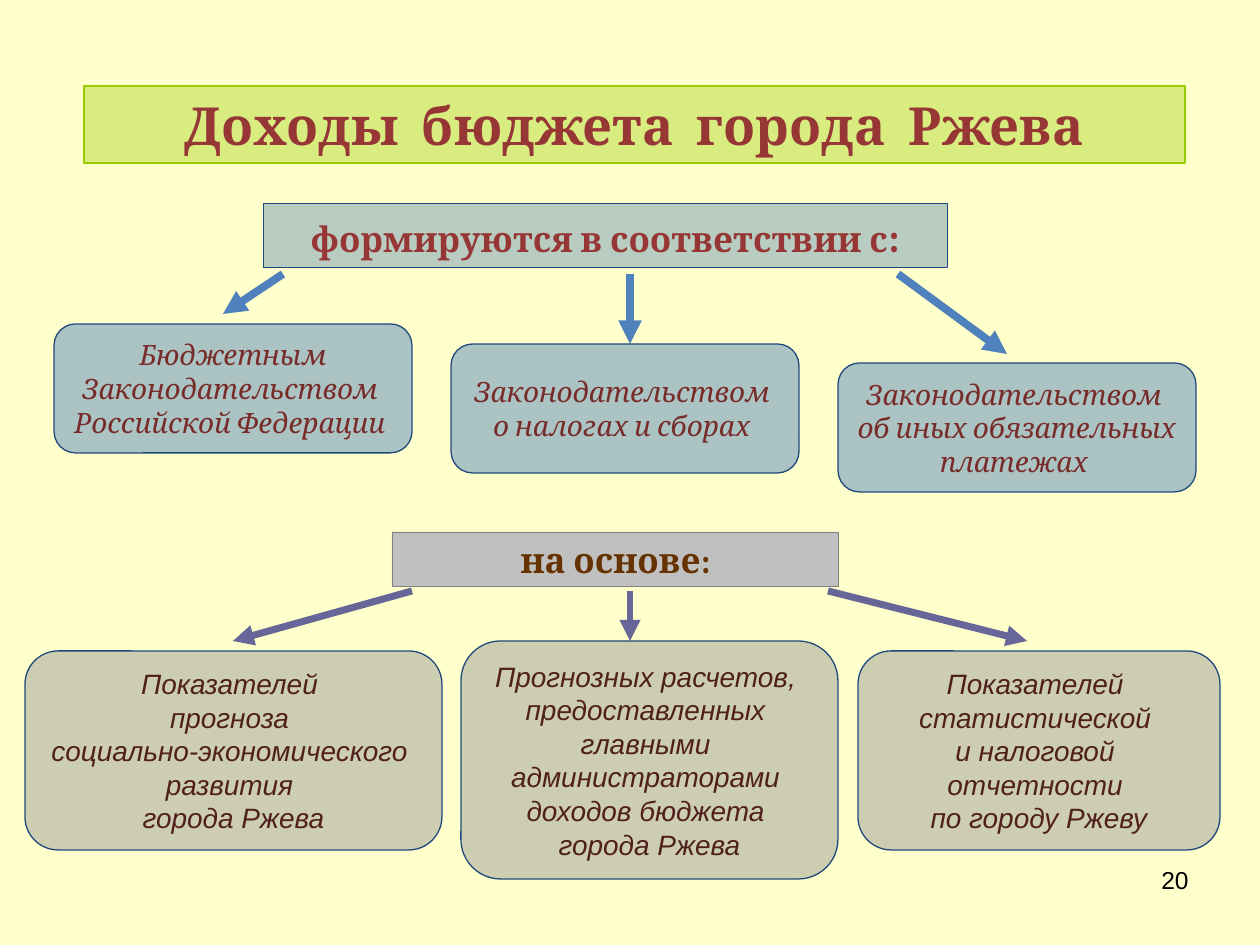
from lxml.etree import SubElement
from pptx import Presentation
from pptx.dml.color import RGBColor
from pptx.enum.shapes import MSO_CONNECTOR, MSO_SHAPE
from pptx.enum.text import MSO_ANCHOR, MSO_AUTO_SIZE, PP_ALIGN
from pptx.oxml.ns import qn
from pptx.util import Inches, Pt

SCALE = 914400 / 126
CREAM = RGBColor(0xFF, 0xFF, 0xCC)
LIME = RGBColor(0x99, 0xCC, 0x00)
RED = RGBColor(0x97, 0x37, 0x35)
WINE = RGBColor(0x78, 0x2C, 0x2A)
BROWN = RGBColor(0x66, 0x33, 0x00)
DARK = RGBColor(0x50, 0x21, 0x1C)
STEEL = RGBColor(0x43, 0x76, 0xB3)
BLUE = RGBColor(0x4F, 0x81, 0xBD)
NAVY = RGBColor(0x1F, 0x49, 0x7D)
PLUM = RGBColor(0x66, 0x66, 0x99)
SILVER = RGBColor(0xC0, 0xC0, 0xC0)
GREY = RGBColor(0x96, 0x96, 0x96)
EDGE = RGBColor(0x80, 0x80, 0x80)
BLACK = RGBColor(0, 0, 0)


def emu(*sizes):
    return [round(size * SCALE) for size in sizes]


class Page:
    serif = "Cambria"
    sans = "Arial"

    def __init__(self, slide):
        self.slide = slide
        back = slide.background.fill
        back.solid()
        back.fore_color.rgb = CREAM

    def paint(self, shape, fill, line, width, alpha=100):
        shape.fill.solid()
        shape.fill.fore_color.rgb = fill
        if alpha < 100:
            color = shape._element.spPr.find(qn("a:solidFill"))[0]
            SubElement(color, qn("a:alpha")).set("val", str(alpha * 1000))
        shape.line.color.rgb = line
        shape.line.width = Pt(width)

    def label(self, shape, lines, font, color, bold=False, italic=False,
              align=PP_ALIGN.CENTER, anchor=MSO_ANCHOR.MIDDLE, wrap=True):
        frame = shape.text_frame
        frame.auto_size = MSO_AUTO_SIZE.NONE
        frame.word_wrap = wrap
        frame.vertical_anchor = anchor
        frame.margin_left = frame.margin_right = Inches(0.1)
        frame.margin_top = frame.margin_bottom = Inches(0.05)
        for i, runs in enumerate(lines):
            para = frame.add_paragraph() if i else frame.paragraphs[0]
            para.alignment = align
            for text, size in runs:
                run = para.add_run()
                run.text = text
                run.font.name = font
                run.font.size = Pt(size)
                run.font.bold = bold
                run.font.italic = italic
                run.font.color.rgb = color

    def title(self, box, text):
        shape = self.slide.shapes.title
        shape.left, shape.top, shape.width, shape.height = emu(*box)
        self.paint(shape, LIME, LIME, 0.75, 37)
        self.label(shape, [[(text, 30)]], self.serif, RED, bold=True)

    def shape(self, kind, box):
        shape = self.slide.shapes.add_shape(kind, *emu(*box))
        shape.shadow.inherit = False
        return shape

    def banner(self, box, runs, color, fill, line, alpha=100):
        shape = self.shape(MSO_SHAPE.RECTANGLE, box)
        self.paint(shape, fill, line, 0.5, alpha)
        self.label(shape, [runs], self.serif, color, bold=True, anchor=MSO_ANCHOR.TOP)

    def card(self, box, lines, font, color, fill):
        shape = self.shape(MSO_SHAPE.ROUNDED_RECTANGLE, box)
        self.paint(shape, fill, NAVY, 0.75, 47)
        self.label(shape, [[(line, 16)] for line in lines], font, color,
                   italic=True, wrap=False)

    def arrow(self, ends, color, width):
        link = self.slide.shapes.add_connector(MSO_CONNECTOR.STRAIGHT, *emu(*ends))
        link.line.color.rgb = color
        link.line.width = Pt(width)
        props = link._element.spPr
        SubElement(props.find(qn("a:ln")), qn("a:tailEnd")).set("type", "triangle")
        SubElement(props, qn("a:effectLst"))

    def number(self, box, text):
        shape = self.slide.shapes.add_textbox(*emu(*box))
        self.label(shape, [[(text, 14)]], self.sans, BLACK,
                   align=PP_ALIGN.RIGHT, anchor=MSO_ANCHOR.TOP)


def main():
    deck = Presentation()
    deck.slide_width, deck.slide_height = Inches(10), Inches(7.5)
    page = Page(deck.slides.add_slide(deck.slide_layouts[5]))

    page.title((84, 86, 1101, 77), "Доходы  бюджета  города  Ржева")
    page.number((907, 859, 294, 66), "20")

    for ends in ((898, 274, 1007, 354), (630, 274, 630, 344), (283, 274, 223, 314)):
        page.arrow(ends, BLUE, 4.5)
    page.banner((263, 204, 684, 64),
                [("формируются в соответствии с", 20), (":", 24)], RED, STEEL, NAVY, 37)

    page.banner((392, 532, 447, 55), [("на основе:", 20)], BROWN, SILVER, EDGE)
    for start, end in ((412, 233), (630, 630), (828, 1027)):
        page.arrow((start, 591, end, 641), PLUM, 4)

    laws = (
        ((54, 324, 358, 129),
         ("Бюджетным", "Законодательством ", "Российской Федерации ")),
        ((451, 344, 348, 129),
         ("Законодательством ", "о налогах и сборах ")),
        ((838, 363, 358, 129),
         ("Законодательством ", "об иных обязательных", "платежах ")),
    )
    for box, lines in laws:
        page.card(box, lines, page.serif, WINE, BLUE)

    bases = (
        ((25, 651, 417, 199),
         ("Показателей ", "прогноза ", "социально-экономического ", "развития ",
          "города Ржева")),
        ((461, 641, 377, 238),
         ("Прогнозных расчетов, ", "предоставленных ", "главными ",
          "администраторами ", "доходов бюджета ", "города Ржева")),
        ((858, 651, 362, 199),
         ("Показателей ", "статистической ", "и налоговой ", "отчетности ",
          "по городу Ржеву")),
    )
    for box, lines in bases:
        page.card(box, lines, page.sans, DARK, GREY)

    deck.save("out.pptx")


if __name__ == "__main__":
    main()
